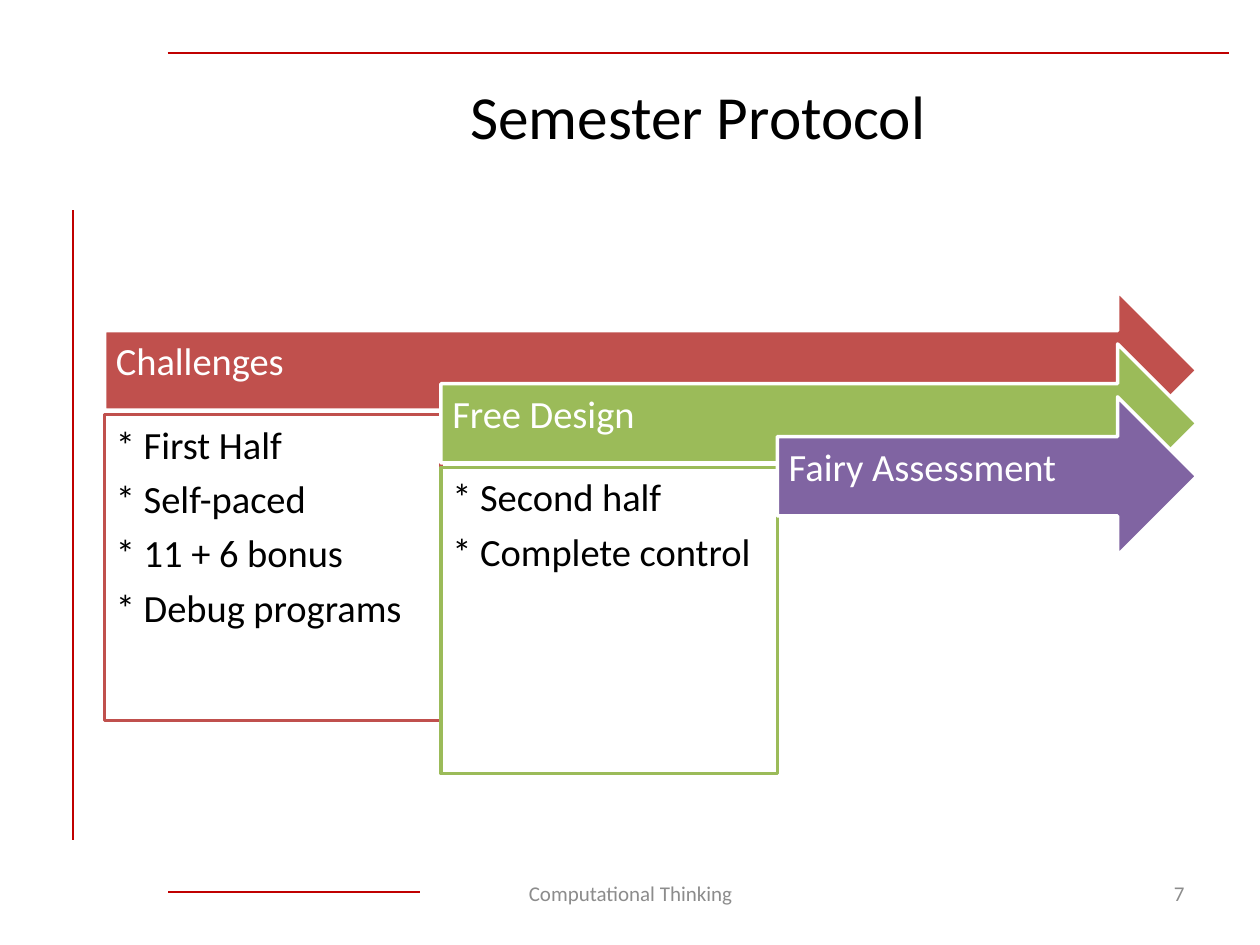
import pptx
import pptx.dml.color
import pptx.enum.shapes
import pptx.enum.text
import pptx.oxml
import pptx.util
from pptx.util import Inches

COLORS = {
    "rule": "C00000",
    "challenges": "C0504D",
    "design": "9BBB59",
    "assessment": "8064A2",
    "white": "FFFFFF",
    "black": "000000",
    "footer": "8C8C8C",
}
SHAPE = pptx.enum.shapes.MSO_SHAPE
ALIGN = pptx.enum.text.PP_ALIGN
ANCHOR = pptx.enum.text.MSO_ANCHOR

RIGHT_EDGE = 9.5
FIRST_LEFT, FIRST_TOP = 0.83, 2.31
STEP_X, STEP_Y = 2.67, 0.42
ARROW_HEIGHT = 1.26
DETAIL_DROP, DETAIL_HEIGHT = 0.98, 2.43

PHASES = [
    ("Challenges", "challenges",
     ["* First Half", "* Self-paced", "* 11 + 6 bonus", "* Debug programs"]),
    ("Free Design", "design", ["* Second half", "* Complete control"]),
    ("Fairy Assessment", "assessment", []),
]


def rgb(name):
    return pptx.dml.color.RGBColor.from_string(COLORS[name])


def write_text(frame, lines, size=22, color="black", align=ALIGN.LEFT,
               anchor=ANCHOR.MIDDLE, insets=(0.1, 0.05, 0.1, 0.05),
               line_spacing=1.0, space_after=0):
    frame.word_wrap = True
    frame.vertical_anchor = anchor
    left, top, right, bottom = map(Inches, insets)
    frame.margin_left, frame.margin_top = left, top
    frame.margin_right, frame.margin_bottom = right, bottom
    for index, line in enumerate(lines):
        paragraph = frame.add_paragraph() if index else frame.paragraphs[0]
        paragraph.text = line
        paragraph.alignment = align
        paragraph.line_spacing = line_spacing
        paragraph.space_after = pptx.util.Pt(space_after)
        paragraph.font.name = "Calibri"
        paragraph.font.size = pptx.util.Pt(size)
        paragraph.font.color.rgb = rgb(color)


def add_label(slide, text, left, top, width, height, **text_format):
    label = slide.shapes.add_textbox(*map(Inches, (left, top, width, height)))
    write_text(label.text_frame, [text], **text_format)


def add_rule(slide, *ends):
    rule = slide.shapes.add_connector(
        pptx.enum.shapes.MSO_CONNECTOR.STRAIGHT, *map(Inches, ends))
    rule.line.color.rgb = rgb("rule")
    rule.line.width = pptx.util.Pt(1.5)
    properties = rule._element.spPr
    properties.append(properties.makeelement(pptx.oxml.ns.qn("a:effectLst"), {}))


def add_block(slide, kind, bounds, fill, outline, lines, **text_format):
    block = slide.shapes.add_shape(kind, *map(Inches, bounds))
    block.shadow.inherit = False
    block.fill.solid()
    block.fill.fore_color.rgb = rgb(fill)
    block.line.color.rgb = rgb(outline)
    block.line.width = pptx.util.Pt(2)
    write_text(block.text_frame, lines, line_spacing=0.9, space_after=7.3,
               **text_format)


def add_phase(slide, index, name, color, details):
    left = FIRST_LEFT + index * STEP_X
    top = FIRST_TOP + index * STEP_Y
    add_block(slide, SHAPE.RIGHT_ARROW,
              (left, top, RIGHT_EDGE - left, ARROW_HEIGHT),
              color, "white", [name], color="white",
              insets=(0.09, 0.09, 0.28, 0.2))
    if details:
        add_block(slide, SHAPE.RECTANGLE,
                  (left, top + DETAIL_DROP, STEP_X, DETAIL_HEIGHT),
                  "white", color, details, anchor=ANCHOR.TOP,
                  insets=(0.09, 0.09, 0.09, 0.09))


def main():
    deck = pptx.Presentation()
    deck.slide_width, deck.slide_height = Inches(10), Inches(7.5)
    slide = deck.slides.add_slide(deck.slide_layouts[6])

    add_rule(slide, 0.58, 1.67, 0.58, 6.67)
    add_rule(slide, 1.33, 0.42, 9.75, 0.42)
    add_rule(slide, 3.33, 7.08, 1.33, 7.08)
    add_label(slide, "Semester Protocol", 1.33, 0.5, 8.42, 0.83,
              size=35, align=ALIGN.CENTER)

    for index, phase in enumerate(PHASES):
        add_phase(slide, index, *phase)

    add_label(slide, "Computational Thinking", 3.42, 6.89, 3.17, 0.4,
              size=12, color="footer", align=ALIGN.CENTER)
    add_label(slide, "7", 7.17, 6.89, 2.33, 0.4,
              size=12, color="footer", align=ALIGN.RIGHT)
    deck.save("out.pptx")


if __name__ == "__main__":
    main()
